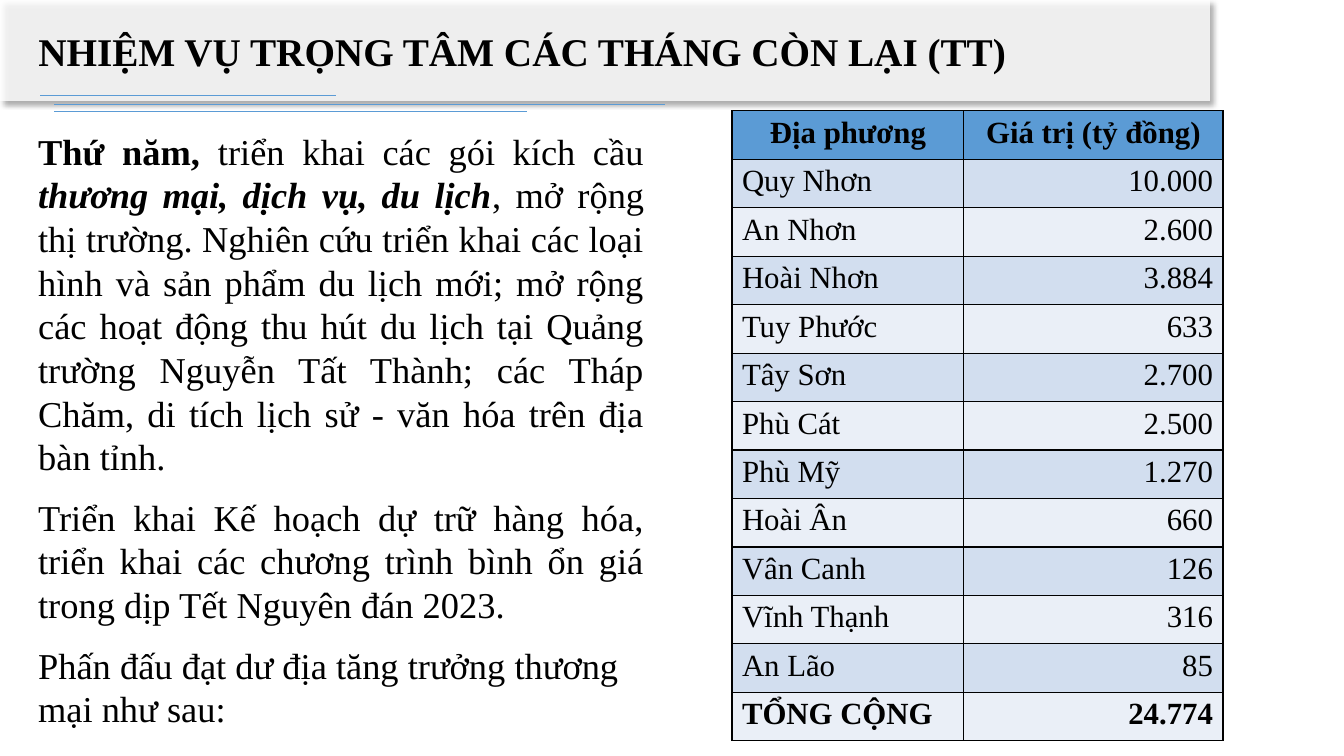
from math import cos, pi, sin

from lxml import etree
from pptx import Presentation
from pptx.dml.color import RGBColor
from pptx.enum.shapes import MSO_CONNECTOR
from pptx.enum.text import MSO_ANCHOR, PP_ALIGN
from pptx.oxml import parse_xml
from pptx.oxml.ns import nsdecls, qn
from pptx.util import Inches, Pt

# Content
TITLE = "NHIỆM VỤ TRỌNG TÂM CÁC THÁNG CÒN LẠI (TT)"
# Paragraphs: alignment, then runs of (text, bold, italic)
BODY = [
    (PP_ALIGN.JUSTIFY, [
        ("Thứ năm,", True, False),
        (" triển khai các gói kích cầu ", False, False),
        ("thương mại, dịch vụ, du lịch", True, True),
        (", mở rộng thị trường. Nghiên cứu triển khai các loại hình và sản phẩm "
         "du lịch mới; mở rộng các hoạt động thu hút du lịch tại Quảng trường "
         "Nguyễn Tất Thành; các Tháp Chăm, di tích lịch sử - văn hóa trên địa "
         "bàn tỉnh.", False, False),
    ]),
    (PP_ALIGN.JUSTIFY, [
        ("Triển khai Kế hoạch dự trữ hàng hóa, triển khai các chương trình bình "
         "ổn giá trong dịp Tết Nguyên đán 2023.", False, False),
    ]),
    (PP_ALIGN.LEFT, [
        ("Phấn đấu đạt dư địa tăng trưởng thương mại như sau:", False, False),
    ]),
]
ROWS = [
    ("Địa phương", "Giá trị (tỷ đồng)"),
    ("Quy Nhơn", "10.000"),
    ("An Nhơn", "2.600"),
    ("Hoài Nhơn", "3.884"),
    ("Tuy Phước", "633"),
    ("Tây Sơn", "2.700"),
    ("Phù Cát", "2.500"),
    ("Phù Mỹ", "1.270"),
    ("Hoài Ân", "660"),
    ("Vân Canh", "126"),
    ("Vĩnh Thạnh", "316"),
    ("An Lão", "85"),
    ("TỔNG CỘNG", "24.774"),
]
COL_WIDTHS = (2.3, 2.57)
RULES = [(0.4, 3.33, 0.95), (0.54, 6.6, 1.04), (0.54, 5.23, 1.1)]  # x1, x2, y
BANNER_W, BANNER_H, BANNER_R = 12.5, 0.95, 0.38


class Theme:
    font = "Times New Roman"
    text = RGBColor(0, 0, 0)
    banner = RGBColor(255, 255, 255)
    accent = RGBColor(0x5B, 0x9B, 0xD5)
    bands = (RGBColor(0xEA, 0xEF, 0xF7), RGBColor(0xD2, 0xDE, 0xEF))
    title_size, body_size, table_size = Pt(28), Pt(26), Pt(22)


def style_run(r, size, bold=False, italic=False):
    r.font.name, r.font.size = Theme.font, size
    r.font.bold, r.font.italic = bold, italic
    r.font.color.rgb = Theme.text


def add_banner(slide):
    steps = [i * pi / 24 for i in range(13)]
    cx, r = BANNER_W - BANNER_R, BANNER_R
    top = [(cx + r * sin(a), r - r * cos(a)) for a in steps]
    bottom = [(cx + r * cos(a), BANNER_H - r + r * sin(a)) for a in steps]
    fb = slide.shapes.build_freeform(0, 0, scale=Inches(1))
    fb.add_line_segments(top + bottom + [(0, BANNER_H)], close=True)
    sp = fb.convert_to_shape()
    sp.fill.solid()
    sp.fill.fore_color.rgb = Theme.banner
    sp.line.fill.background()
    color = sp.fill._xPr.find(qn("a:solidFill"))[0]
    etree.SubElement(color, qn("a:alpha"), val="80000")
    sp._element.spPr.append(parse_xml(
        f'<a:effectLst {nsdecls("a")}><a:outerShdw blurRad="{Pt(4)}" '
        f'dist="{Pt(3)}" dir="2700000" algn="tl" rotWithShape="0">'
        '<a:srgbClr val="000000"><a:alpha val="40000"/></a:srgbClr>'
        '</a:outerShdw></a:effectLst>'))


def add_borders(cell):
    tcPr = cell._tc.get_or_add_tcPr()
    for i, side in enumerate(("lnL", "lnR", "lnT", "lnB")):
        tcPr.insert(i, parse_xml(
            f'<a:{side} {nsdecls("a")} w="{Pt(1)}"><a:solidFill>'
            f'<a:srgbClr val="{Theme.text}"/></a:solidFill></a:{side}>'))


def main():
    prs = Presentation()
    prs.slide_width, prs.slide_height = Inches(13.33), Inches(7.5)
    slide = prs.slides.add_slide(prs.slide_layouts[5])

    # Banner, with the title in front of it
    add_banner(slide)
    title = slide.shapes.title
    slide.shapes._spTree.append(title._element)
    title.left, title.top = Inches(0.28), Inches(0.22)
    title.width, title.height = Inches(12.78), Inches(0.57)
    tf = title.text_frame
    tf.text = TITLE
    tf.vertical_anchor = MSO_ANCHOR.TOP
    tf.paragraphs[0].alignment = PP_ALIGN.LEFT
    style_run(tf.paragraphs[0].runs[0], Theme.title_size, bold=True)

    # Thin rules under the banner
    for x1, x2, y in RULES:
        rule = slide.shapes.add_connector(
            MSO_CONNECTOR.STRAIGHT, Inches(x1), Inches(y), Inches(x2), Inches(y))
        rule.line.color.rgb = Theme.accent
        rule.line.width = Pt(0.5)
        etree.SubElement(rule._element.spPr, qn("a:effectLst"))

    # Body text
    box = slide.shapes.add_textbox(Inches(0.28), Inches(1.23), Inches(6.21), Inches(6.13))
    tf = box.text_frame
    tf.word_wrap = True
    for i, (align, runs) in enumerate(BODY):
        p = tf.add_paragraph() if i else tf.paragraphs[0]
        p.alignment, p.space_after = align, Pt(12)
        for text, bold, italic in runs:
            r = p.add_run()
            r.text = text
            style_run(r, Theme.body_size, bold, italic)

    # Table of local values
    table = slide.shapes.add_table(
        len(ROWS), len(COL_WIDTHS), Inches(7.26), Inches(1.1),
        Inches(sum(COL_WIDTHS)), Inches(6.25)).table
    for col, width in zip(table.columns, COL_WIDTHS):
        col.width = Inches(width)
    for i, row in enumerate(ROWS):
        for j, text in enumerate(row):
            cell = table.cell(i, j)
            cell.fill.solid()
            cell.fill.fore_color.rgb = Theme.bands[i % 2] if i else Theme.accent
            add_borders(cell)
            cell.text_frame.text = text
            p = cell.text_frame.paragraphs[0]
            p.alignment = (PP_ALIGN.LEFT, PP_ALIGN.RIGHT)[j] if i else PP_ALIGN.CENTER
            style_run(p.runs[0], Theme.table_size, bold=i in (0, len(ROWS) - 1))

    prs.save("out.pptx")


if __name__ == "__main__":
    main()
